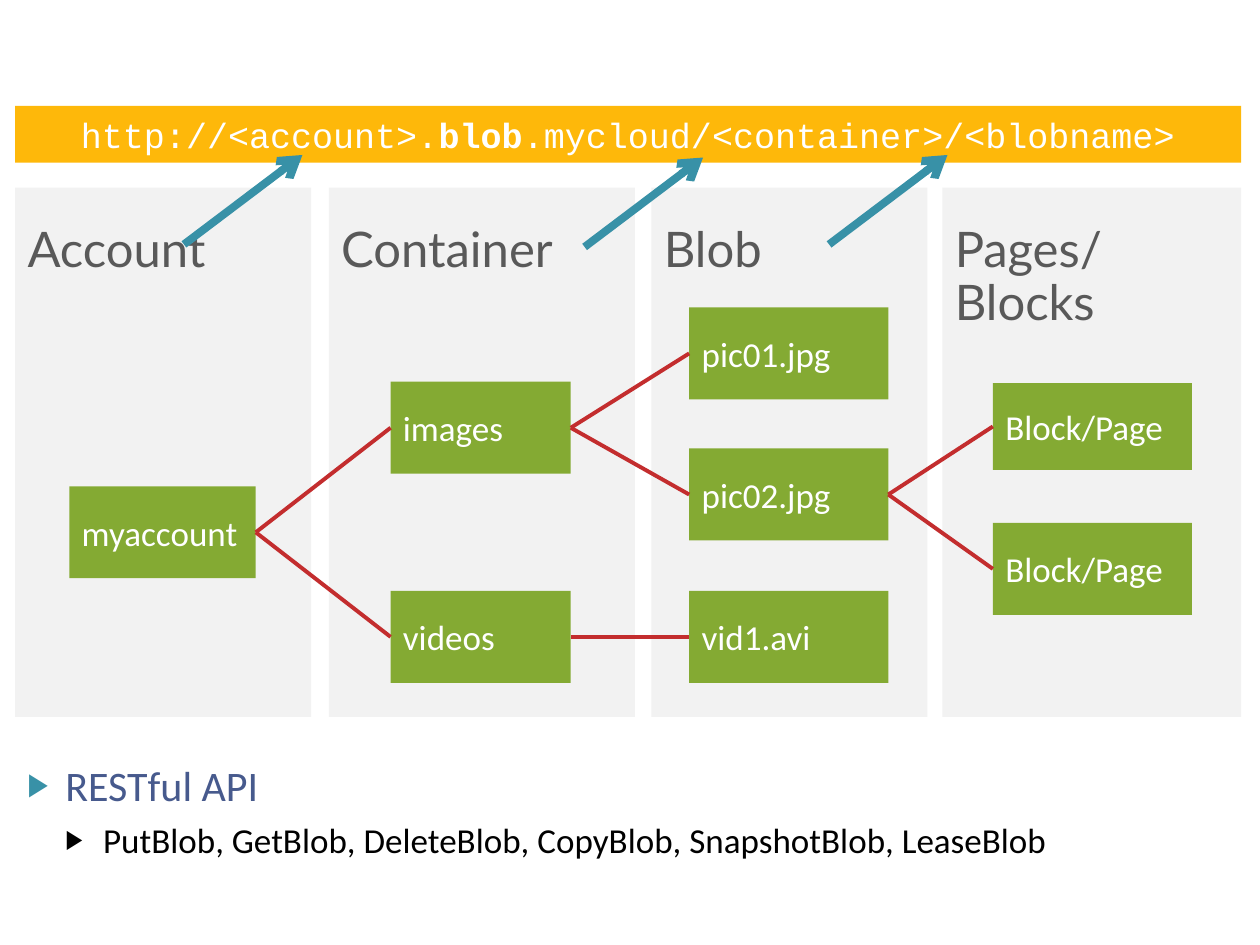
from lxml import etree
from pptx import Presentation
from pptx import util as u
from pptx.dml.color import RGBColor
from pptx.enum import shapes, text
from pptx.oxml import ns

GREY, GREEN, GOLD = "F2F2F2", "84AA33", "FEB80A"
RED, TEAL, NAVY = "C32D2E", "3891A7", "475A8D"
WHITE, BLACK, DARK = "FFFFFF", "000000", "595959"


def color(code):
    return RGBColor.from_string(code)


def add(parent, tag, **attrs):
    return etree.SubElement(parent, ns.qn(tag), attrs)


class Deck:
    def __init__(self):
        self.prs = Presentation()
        self.prs.slide_width = u.Inches(10)
        self.prs.slide_height = u.Inches(7.5)
        self.slide = self.prs.slides.add_slide(self.prs.slide_layouts[6])

    def font(self, para, name, size, code):
        font = para.font
        font.name, font.size = name, u.Pt(size)
        font.color.rgb = color(code)

    def rect(self, place, fill):
        box = self.slide.shapes.add_shape(
            shapes.MSO_SHAPE.RECTANGLE, *map(u.Inches, place))
        box.shadow.inherit = False
        box.fill.solid()
        box.fill.fore_color.rgb = color(fill)
        box.line.fill.background()
        return box

    def column(self, left, width, title):
        frame = self.rect((left, 1.49, width, 4.2), GREY).text_frame
        frame.margin_top = u.Inches(0.3)
        frame.vertical_anchor = text.MSO_ANCHOR.TOP
        para = frame.paragraphs[0]
        para.text = title
        para.alignment = text.PP_ALIGN.LEFT
        para.line_spacing = 0.9
        self.font(para, "Lato", 28, DARK)

    def node(self, left, top, width, label, height=0.73):
        box = self.rect((left, top, width, height), GREEN)
        para = box.text_frame.paragraphs[0]
        para.text = label
        para.alignment = text.PP_ALIGN.LEFT
        self.font(para, "Calibri", 20, WHITE)
        return box

    def banner(self, place, parts):
        para = self.rect(place, GOLD).text_frame.paragraphs[0]
        para.alignment = text.PP_ALIGN.CENTER
        for words, bold in parts:
            run = para.add_run()
            run.text = words
            run.font.bold = bold
        self.font(para, "Courier New", 20, WHITE)

    def line(self, start, end, code, width):
        link = self.slide.shapes.add_connector(
            shapes.MSO_CONNECTOR.STRAIGHT, *map(u.Inches, start + end))
        link.line.color.rgb = color(code)
        link.line.width = u.Pt(width)
        add(link.element.spPr, "a:effectLst")
        return link

    def join(self, first, second):
        link = self.line((0, 0), (1, 1), RED, 2.25)
        link.begin_connect(first, 3)
        link.end_connect(second, 1)

    def arrow(self, left, top):
        link = self.line((left, top), (left + 0.94, top - 0.71), TEAL, 4.5)
        add(link.line._get_or_add_ln(), "a:tailEnd", type="arrow")

    def bullets(self, place, items):
        frame = self.slide.shapes.add_textbox(
            *map(u.Inches, place)).text_frame
        frame.word_wrap = True
        frame.vertical_anchor = text.MSO_ANCHOR.MIDDLE
        for level, (words, size, code, mark) in enumerate(items):
            para = frame.add_paragraph() if level else frame.paragraphs[0]
            para.text = words
            para.level = level
            if level:
                para.space_before = u.Pt(5)
            props = para._p.get_or_add_pPr()
            props.set("marL", str(u.Inches(0.3 * (level + 1))))
            props.set("indent", str(u.Inches(-0.3)))
            add(add(props, "a:buClr"), "a:srgbClr", val=mark)
            add(props, "a:buSzPct", val="76000")
            add(props, "a:buFont", typeface="Arial")
            add(props, "a:buChar", char="▶")
            self.font(para, "Calibri", size, code)


def main():
    deck = Deck()

    # Columns
    for left, width, title in ((0.12, 2.35, "Account"),
                               (2.61, 2.43, "Container"),
                               (5.17, 2.19, "Blob"),
                               (7.48, 2.37, "Pages/ Blocks")):
        deck.column(left, width, title)

    # Address banner
    deck.banner((0.12, 0.84, 9.73, 0.45),
                (("http://<account>.", False), ("blob", True),
                 (".mycloud/<container>/<blobname>", False)))

    # Storage tree
    account = deck.node(0.55, 3.86, 1.48, "myaccount")
    images, videos = [deck.node(3.1, top, 1.43, label) for top, label in
                      ((3.03, "images"), (4.69, "videos"))]
    pic1, pic2, vid = [deck.node(5.47, top, 1.58, label) for top, label in
                       ((2.44, "pic01.jpg"), (3.56, "pic02.jpg"),
                        (4.69, "vid1.avi"))]
    blocks = [deck.node(7.88, top, 1.58, "Block/Page", height)
              for top, height in ((3.04, 0.69), (4.15, 0.73))]
    for first, nexts in ((account, (images, videos)), (images, (pic1, pic2)),
                         (videos, (vid,)), (pic2, blocks)):
        for second in nexts:
            deck.join(first, second)

    # Arrows from columns to address parts
    for left, top in ((1.46, 1.94), (4.64, 1.96), (6.58, 1.94)):
        deck.arrow(left, top)

    # API list
    deck.bullets((0.12, 5.8, 9.76, 1.26), (
        ("RESTful API", 24, NAVY, TEAL),
        ("PutBlob, GetBlob, DeleteBlob, CopyBlob, SnapshotBlob, LeaseBlob",
         20, BLACK, BLACK)))

    deck.prs.save("out.pptx")


if __name__ == "__main__":
    main()
